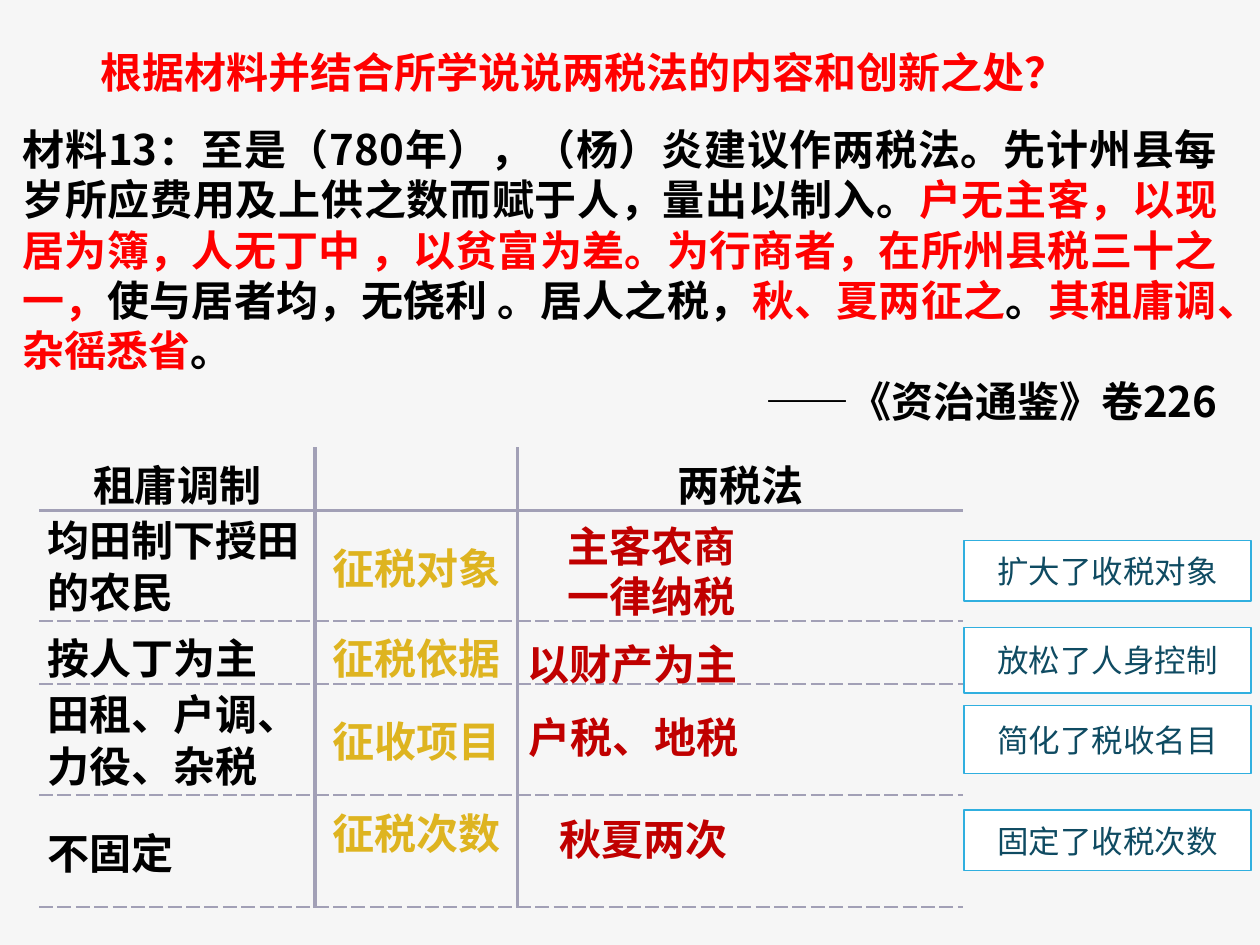
from lxml.etree import SubElement
from pptx import Presentation
from pptx.dml.color import RGBColor
from pptx.enum.shapes import MSO_SHAPE
from pptx.enum.text import MSO_ANCHOR, MSO_AUTO_SIZE, PP_ALIGN
from pptx.oxml.ns import qn
from pptx.util import Inches, Pt

FONT = "Noto Sans CJK SC"
BLACK, RED, DARK_RED, GOLD = "000000", "FF0000", "C00000", "DEB420"
BORDER, BOX_LINE, BOX_TEXT = "A2A0B6", "30AFDF", "0F4B62"
LEFT, CENTER, RIGHT, JUSTIFY = PP_ALIGN.LEFT, PP_ALIGN.CENTER, PP_ALIGN.RIGHT, PP_ALIGN.JUSTIFY

TITLE = "根据材料并结合所学说说两税法的内容和创新之处？"
MATERIAL = [
    ("材料13：至是（780年），（杨）炎建议作两税法。先计州县每岁所应费用及上供之数而赋于人，量出以制入。", BLACK),
    ("户无主客，以现居为簿，人无丁中 ，以贫富为差。为行商者，在所州县税三十之一，", RED),
    ("使与居者均，无侥利 。居人之税，", BLACK),
    ("秋、夏两征之", RED),
    ("。", BLACK),
    ("其租庸调、杂徭悉省", RED),
    ("。", BLACK),
]
CITATION = "——《资治通鉴》卷226"

COLUMN_WIDTHS = [2.19, 1.61, 3.53]
ROW_HEIGHTS = [0.5, 0.88, 0.5, 0.88, 0.89]
ROWS = [
    (["租庸调制"], [], ["两税法"]),
    (["均田制下授田", "的农民"], ["征税对象"], []),
    (["按人丁为主"], ["征税依据"], []),
    (["田租、户调、", "力役、杂税"], ["征收项目"], []),
    (["不固定"], ["征税次数"], []),
]
ANSWERS = [
    (["主客农商", "一律纳税"], (3.96, 4.08, 2.42, 0.91), CENTER, 1),
    (["以财产为主"], (3.77, 4.82, 2.5, 0.71), CENTER, 1.5),
    (["户税、地税"], (4.1, 5.6, 2.74, 0.5), LEFT, 1),
    (["秋夏两次"], (4, 6.41, 2.22, 0.5), CENTER, 1),
]
INNOVATIONS = [
    ("扩大了收税对象", 4.29, 0.48),
    ("放松了人身控制", 4.98, 0.52),
    ("简化了税收名目", 5.6, 0.54),
    ("固定了收税次数", 6.43, 0.48),
]


def color(value):
    return RGBColor.from_string(value)


def write_paragraphs(frame, paragraphs, align=LEFT, size=24, bold=True, fill=BLACK, spacing=None):
    for index, content in enumerate(paragraphs):
        paragraph = frame.add_paragraph() if index else frame.paragraphs[0]
        paragraph.alignment = align
        if spacing:
            paragraph.line_spacing = spacing
        runs = [(content, fill)] if isinstance(content, str) else content
        for text, run_color in runs:
            run = paragraph.add_run()
            run.text = text
            run.font.size = Pt(size)
            run.font.bold = bold
            run.font.color.rgb = color(run_color)
            run.font.name = FONT
            SubElement(run.font._element, qn("a:ea"), typeface=FONT)


def add_text(slide, paragraphs, position, **text_format):
    frame = slide.shapes.add_textbox(*map(Inches, position)).text_frame
    frame.word_wrap = True
    frame.auto_size = MSO_AUTO_SIZE.SHAPE_TO_FIT_TEXT
    write_paragraphs(frame, paragraphs, **text_format)
    return frame


def set_border(cell, side, width=0, dash="solid"):
    line = SubElement(cell._tc.get_or_add_tcPr(), qn(f"a:ln{side}"), w=str(Pt(width)))
    if width:
        fill = SubElement(line, qn("a:solidFill"))
        SubElement(fill, qn("a:srgbClr"), val=BORDER)
        SubElement(line, qn("a:prstDash"), val=dash)
    else:
        SubElement(line, qn("a:noFill"))


def add_comparison_table(slide):
    table = slide.shapes.add_table(
        len(ROWS), len(COLUMN_WIDTHS), Inches(0.31), Inches(3.55),
        Inches(sum(COLUMN_WIDTHS)), Inches(sum(ROW_HEIGHTS))).table
    table.first_row = table.horz_banding = False
    for column, width in zip(table.columns, COLUMN_WIDTHS):
        column.width = Inches(width)
    for row, height in zip(table.rows, ROW_HEIGHTS):
        row.height = Inches(height)
    heavy, dashed = (2.25,), (1, "sysDash")
    horizontal_lines = [(), heavy] + [dashed] * (len(ROWS) - 1)
    vertical_lines = [(), heavy, heavy, ()]
    for row_index, row in enumerate(ROWS):
        for column_index, paragraphs in enumerate(row):
            cell = table.cell(row_index, column_index)
            set_border(cell, "L", *vertical_lines[column_index])
            set_border(cell, "R", *vertical_lines[column_index + 1])
            set_border(cell, "T", *horizontal_lines[row_index])
            set_border(cell, "B", *horizontal_lines[row_index + 1])
            cell.fill.background()
            cell.vertical_anchor = MSO_ANCHOR.MIDDLE
            cell.margin_left = cell.margin_right = Inches(0.07)
            cell.margin_top = cell.margin_bottom = Inches(0.04)
            body = row_index > 0
            write_paragraphs(
                cell.text_frame, paragraphs,
                align=LEFT if body and column_index == 0 else CENTER,
                fill=GOLD if body and column_index == 1 else BLACK,
                spacing=0.85 if len(paragraphs) > 1 else None)
    table.cell(len(ROWS) - 1, 1).margin_bottom = Inches(0.36)


def add_innovation(slide, text, top, height):
    shape = slide.shapes.add_shape(
        MSO_SHAPE.RECTANGLE, Inches(7.65), Inches(top), Inches(2.28), Inches(height))
    shape.shadow.inherit = False
    shape.fill.solid()
    shape.fill.fore_color.rgb = color("FFFFFF")
    shape.line.color.rgb = color(BOX_LINE)
    shape.line.width = Pt(1)
    shape.text_frame.vertical_anchor = MSO_ANCHOR.MIDDLE
    write_paragraphs(shape.text_frame, [text], align=CENTER, size=18, bold=False, fill=BOX_TEXT)


def main():
    presentation = Presentation()
    presentation.slide_width, presentation.slide_height = Inches(10), Inches(7.5)
    slide = presentation.slides.add_slide(presentation.slide_layouts[6])
    slide.background.fill.solid()
    slide.background.fill.fore_color.rgb = color("F6F6F6")

    material = add_text(slide, [MATERIAL, CITATION], (0.08, 0.93, 9.68, 2.52), align=JUSTIFY)
    material.paragraphs[1].alignment = RIGHT
    title = add_text(slide, [TITLE], (0.73, 0.33, 8.61, 0.48), fill=RED)
    title.margin_left = title.margin_right = Inches(0.07)
    title.margin_top = title.margin_bottom = Inches(0.04)
    add_comparison_table(slide)
    for paragraphs, position, align, spacing in ANSWERS:
        add_text(slide, paragraphs, position, align=align, fill=DARK_RED, spacing=spacing)
    for innovation in INNOVATIONS:
        add_innovation(slide, *innovation)
    presentation.save("out.pptx")


if __name__ == "__main__":
    main()
